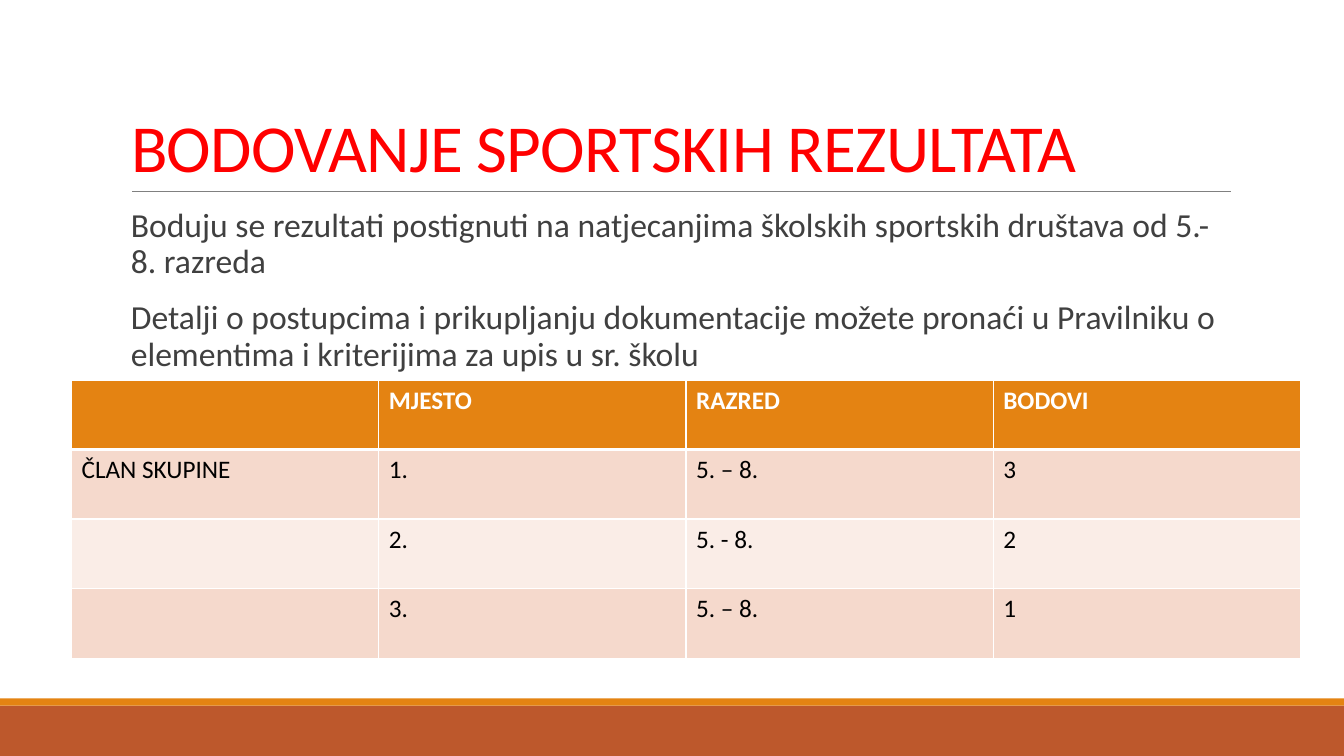
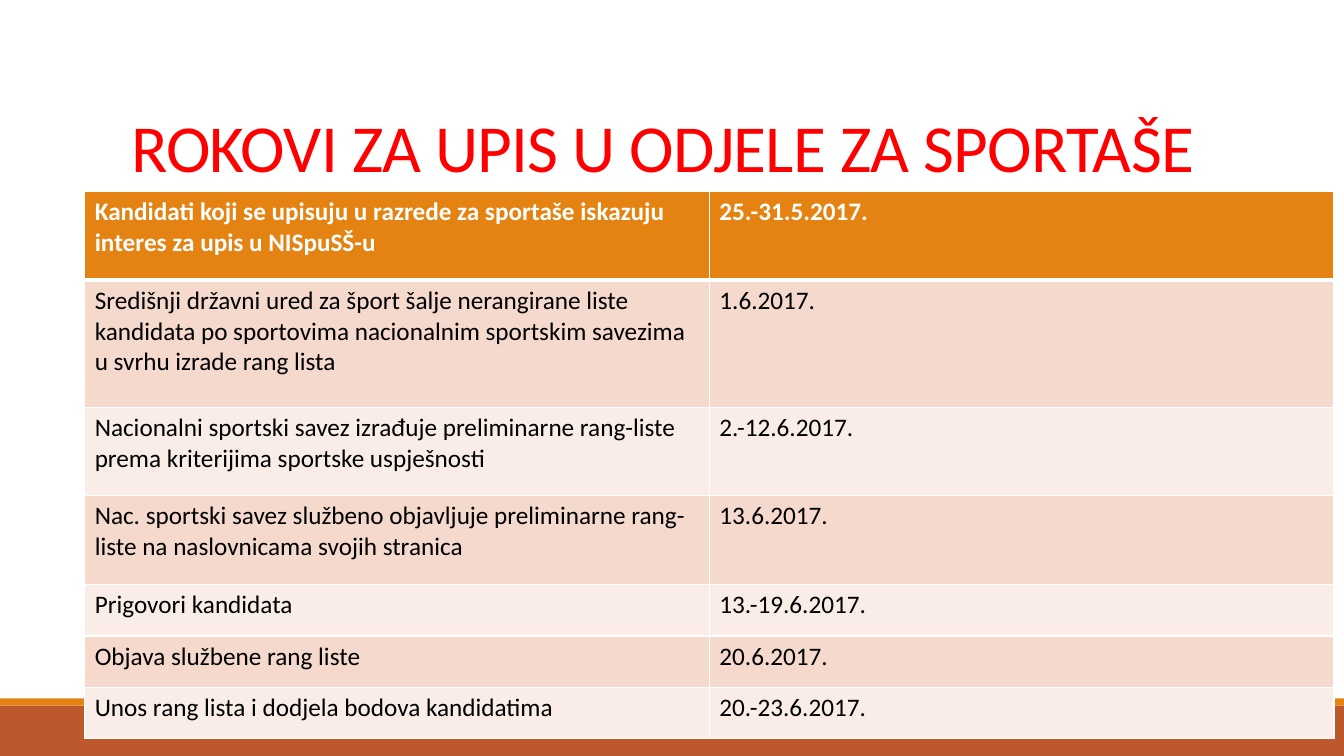
from lxml import etree
from pptx import Presentation
from pptx.dml.color import RGBColor
from pptx.enum import shapes, text
from pptx.oxml.ns import qn
from pptx.util import Inches, Pt

FONT = "Calibri"
RED, GREY, DARK = "FF0000", "808080", "404040"
WHITE, BLACK = "FFFFFF", "000000"
ORANGE, RUST = "E48312", "BD582C"
ROW_FILLS = ("F5D9CC", "FAEDE7")
SLIDE_WIDTH, SLIDE_HEIGHT = 13.33, 7.5
TITLE_BOX = (1.2, 0.31, 11, 1.59)


def color(value):
    return RGBColor.from_string(value)


def inches(box):
    return [Inches(length) for length in box]


def add_run(paragraph, words, size, fill, bold=False):
    run = paragraph.add_run()
    run.text = words
    run.font.name, run.font.size, run.font.bold = FONT, Pt(size), bold
    run.font.color.rgb = color(fill)
    return run


def add_band(slide, box, fill):
    band = slide.shapes.add_shape(shapes.MSO_SHAPE.RECTANGLE, *inches(box))
    band.shadow.inherit = False
    band.fill.solid()
    band.fill.fore_color.rgb = color(fill)
    band.line.fill.background()


def add_rule(slide, left, right, top):
    rule = slide.shapes.add_connector(
        shapes.MSO_CONNECTOR.STRAIGHT, *inches((left, top, right, top)))
    rule.line.color.rgb = color(GREY)
    rule.line.width = Pt(0.5)
    etree.SubElement(rule._element.spPr, qn("a:effectLst"))


def place_title(slide, words, box):
    title = slide.shapes.title
    title.left, title.top, title.width, title.height = inches(box)
    frame = title.text_frame
    frame.word_wrap = True
    frame.auto_size = text.MSO_AUTO_SIZE.NONE
    frame.vertical_anchor = text.MSO_ANCHOR.BOTTOM
    paragraph = frame.paragraphs[0]
    paragraph.alignment = text.PP_ALIGN.LEFT
    paragraph.line_spacing = 0.85
    run = add_run(paragraph, words, 48, RED)
    run.font._element.set("spc", "-50")


def add_titled_slide(presentation, words):
    """Title-only slide with the shared footer bands and title rule."""
    slide = presentation.slides.add_slide(presentation.slide_layouts[5])
    add_band(slide, (0, 7, SLIDE_WIDTH, 0.5), RUST)
    add_band(slide, (0, 6.93, SLIDE_WIDTH, 0.07), ORANGE)
    add_rule(slide, 1.31, 12.21, 1.9)
    place_title(slide, words, TITLE_BOX)
    return slide


def add_body(slide, lines, box):
    frame = slide.shapes.add_textbox(*inches(box)).text_frame
    frame.word_wrap = True
    frame.margin_left, frame.margin_right = Inches(0.1), 0
    for index, line in enumerate(lines):
        paragraph = frame.add_paragraph() if index else frame.paragraphs[0]
        paragraph.line_spacing = 0.9
        paragraph.space_before, paragraph.space_after = Pt(12), Pt(2)
        add_run(paragraph, line, 24, DARK)


def set_borders(cell, top, bottom):
    """White borders; they must precede the fill in the cell properties."""
    properties = cell._tc.get_or_add_tcPr()
    for side, width in (("L", 1), ("R", 1), ("T", top), ("B", bottom)):
        line = etree.SubElement(properties, qn(f"a:ln{side}"), w=str(Pt(width)))
        fill = etree.SubElement(line, qn("a:solidFill"))
        etree.SubElement(fill, qn("a:srgbClr"), val=WHITE)


def add_banded_table(slide, rows, heights, box):
    columns = len(rows[0])
    table = slide.shapes.add_table(len(rows), columns, *inches(box)).table
    for column in table.columns:
        column.width = Inches(box[2] / columns)
    for index, (row, height) in enumerate(zip(rows, heights)):
        table.rows[index].height = Inches(height)
        header = index == 0
        for position, words in enumerate(row):
            cell = table.cell(index, position)
            # A thick line parts the header from the first row
            set_borders(cell, 3 if index == 1 else 1, 3 if header else 1)
            cell.fill.solid()
            cell.fill.fore_color.rgb = color(
                ORANGE if header else ROW_FILLS[(index - 1) % 2])
            if words:
                add_run(cell.text_frame.paragraphs[0], words, 18,
                        WHITE if header else BLACK, header)


def build_scoring(presentation):
    slide = add_titled_slide(presentation, "BODOVANJE SPORTSKIH REZULTATA")
    add_body(slide, [
        "Boduju se rezultati postignuti na natjecanjima školskih sportskih "
        "društava od 5.-8. razreda",
        "Detalji o postupcima i prikupljanju dokumentacije možete pronaći u "
        "Pravilniku o elementima i kriterijima za upis u sr. školu",
    ], (1.2, 2.02, 11, 4.4))
    rows = [
        ("", "MJESTO", "RAZRED", "BODOVI"),
        ("ČLAN SKUPINE", "1.", "5. – 8.", "3"),
        ("", "2.", "5. - 8.", "2"),
        ("", "3.", "5. – 8.", "1"),
    ]
    add_banded_table(slide, rows, [0.69] * len(rows), (0.71, 3.77, 12.19, 2.77))


def build_deadlines(presentation):
    slide = add_titled_slide(presentation, "ROKOVI ZA UPIS U ODJELE ZA SPORTAŠE")
    rows = [
        ("Kandidati koji se upisuju u razrede za sportaše iskazuju interes "
         "za upis u NISpuSŠ-u", "25.-31.5.2017."),
        ("Središnji državni ured za šport šalje nerangirane liste kandidata "
         "po sportovima nacionalnim sportskim savezima u svrhu izrade rang "
         "lista", "1.6.2017."),
        ("Nacionalni sportski savez izrađuje preliminarne rang-liste prema "
         "kriterijima sportske uspješnosti", "2.-12.6.2017."),
        ("Nac. sportski savez službeno objavljuje preliminarne rang-liste "
         "na naslovnicama svojih stranica", "13.6.2017."),
        ("Prigovori kandidata", "13.-19.6.2017."),
        ("Objava službene rang liste", "20.6.2017."),
        ("Unos rang lista i dodjela bodova kandidatima", "20.-23.6.2017."),
    ]
    heights = [0.88, 1.26, 0.88, 0.88, 0.51, 0.51, 0.51]
    add_banded_table(slide, rows, heights, (0.84, 1.9, 12.39, 5.43))


def main():
    presentation = Presentation()
    presentation.slide_width = Inches(SLIDE_WIDTH)
    presentation.slide_height = Inches(SLIDE_HEIGHT)
    build_scoring(presentation)
    build_deadlines(presentation)
    presentation.save("out.pptx")


if __name__ == "__main__":
    main()
